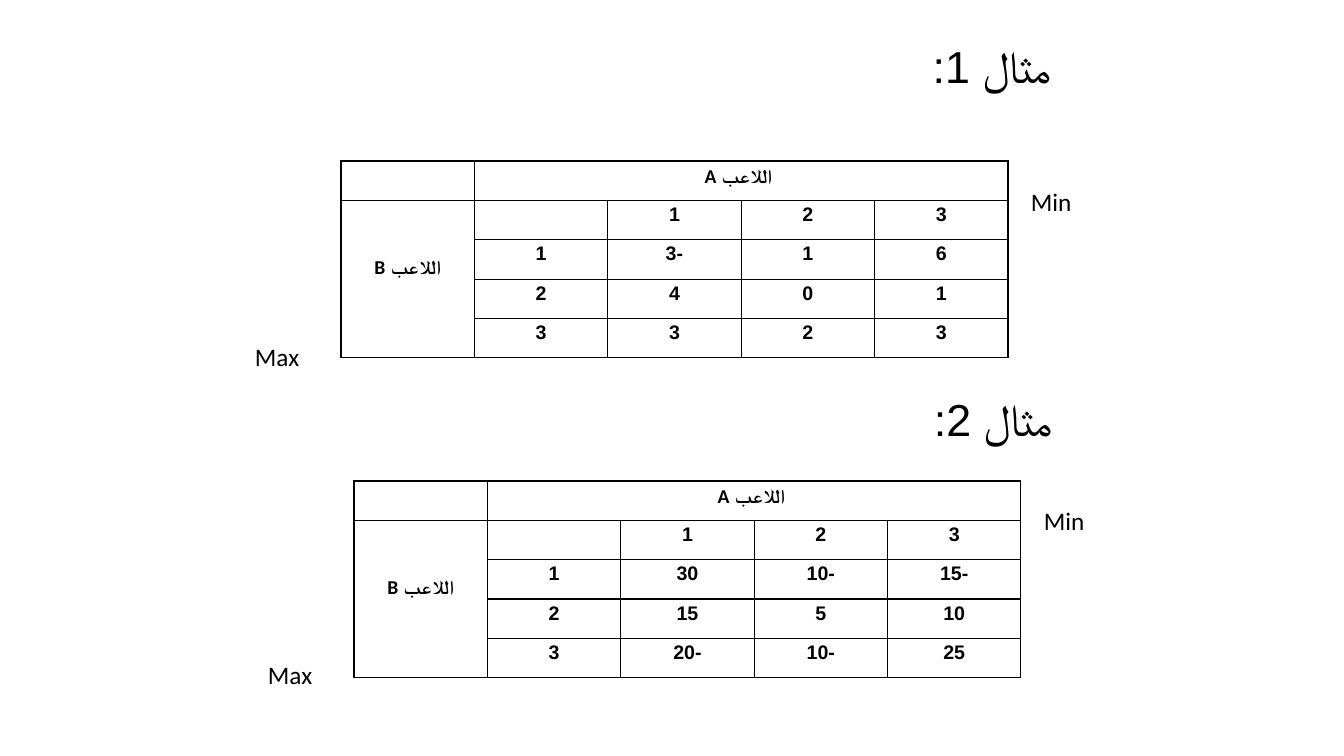
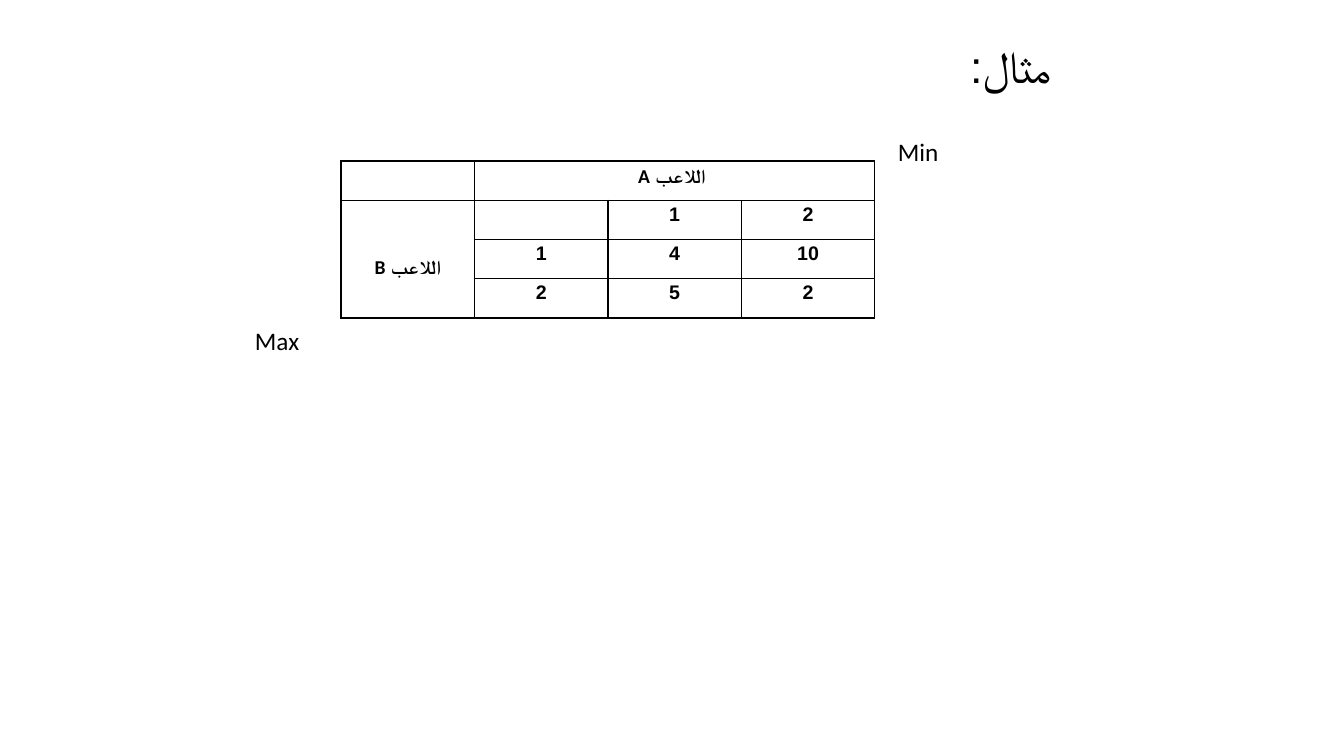
from lxml.etree import SubElement
from pptx import Presentation
from pptx.dml.color import RGBColor
from pptx.enum.text import MSO_ANCHOR as ANCHOR, MSO_AUTO_SIZE as AUTOSIZE, PP_ALIGN as ALIGN
from pptx.oxml.ns import qn
from pptx.util import Emu, Pt

BLACK = RGBColor(0x00, 0x00, 0x00)
FONT, ARABIC_FONT = "Calibri", "Arial"
SLIDE_W, SLIDE_H = 1344, 756
SCALE = 12192000 / SLIDE_W
TITLE_W, TITLE_H = 265, 65
LABEL_W, LABEL_H = 83, 40
SIDE_OFFSET = 52


def px(value):
    return Emu(round(value * SCALE))


def write(tf, text, size, align=None, bold=False):
    p = tf.paragraphs[0]
    if align is not None:
        p.alignment = align
        p._p.get_or_add_pPr().set("rtl", "1")
    r = p.add_run()
    r.text = text
    r.font.size = Pt(size)
    r.font.bold = bold
    r.font.name = FONT
    r.font.color.rgb = BLACK
    SubElement(r._r.get_or_add_rPr(), qn("a:cs")).set("typeface", ARABIC_FONT)
    return p


def set_heading(sp, left, top, text):
    sp.left, sp.top, sp.width, sp.height = map(px, (left, top, TITLE_W, TITLE_H))
    tf = sp.text_frame
    tf.word_wrap = True
    tf.auto_size = AUTOSIZE.SHAPE_TO_FIT_TEXT
    tf.vertical_anchor = ANCHOR.TOP
    write(tf, text, 32, ALIGN.RIGHT)


def add_label(slide, left, top, text):
    sp = slide.shapes.add_textbox(px(left), px(top), px(LABEL_W), px(LABEL_H))
    tf = sp.text_frame
    tf.word_wrap = True
    tf.auto_size = AUTOSIZE.SHAPE_TO_FIT_TEXT
    write(tf, text, 18)


def style_cell(cell):
    cell.margin_left = cell.margin_right = cell.margin_top = cell.margin_bottom = 0
    tcPr = cell._tc.get_or_add_tcPr()
    for side in ("a:lnL", "a:lnR", "a:lnT", "a:lnB"):
        ln = SubElement(tcPr, qn(side), w=str(Pt(1)))
        fill = SubElement(ln, qn("a:solidFill"))
        SubElement(fill, qn("a:srgbClr"), val=str(BLACK))
    cell.fill.background()


def write_cell(cell, text):
    p = write(cell.text_frame, text, 14, ALIGN.CENTER, bold=True)
    p.line_spacing = 1.15


def add_game(slide, box, payoffs, min_offset, max_offset):
    left, top, width, height = box
    n = len(payoffs) + 2
    table = slide.shapes.add_table(n, n, *map(px, box)).table
    table.first_row = table.horz_banding = False
    for col in table.columns:
        col.width = px(width / n)
    for row in table.rows:
        row.height = px(height / n)
    for cell in table.iter_cells():
        style_cell(cell)

    player_a, player_b = table.cell(0, 1), table.cell(1, 0)
    player_a.merge(table.cell(0, n - 1))
    player_b.merge(table.cell(n - 1, 0))
    write_cell(player_a, " اللاعب A")
    write_cell(player_b, "اللاعب B")
    player_b.margin_top = px(SIDE_OFFSET)

    for i, values in enumerate(payoffs, 1):
        write_cell(table.cell(1, i + 1), str(i))
        write_cell(table.cell(i + 1, 1), str(i))
        for j, value in enumerate(values, 2):
            write_cell(table.cell(i + 1, j), str(value))

    add_label(slide, left + width + 13, top + min_offset, "Min")
    add_label(slide, left - 96, top + max_offset, "Max")


def add_title_slide(prs, title):
    slide = prs.slides.add_slide(prs.slide_layouts[5])
    set_heading(slide.shapes.title, 796, 34, title)
    return slide


def two_examples(prs):
    slide = add_title_slide(prs, "مثال 1:")
    add_game(slide, (341, 161, 667, 197),
             [(-3, 1, 6), (4, 0, 1), (3, 2, 3)], 20, 175)
    add_game(slide, (354, 481, 667, 197),
             [(30, -10, -15), (15, 5, 10), (-20, -10, 25)], 19, 173)
    set_heading(slide.shapes.add_textbox(0, 0, 0, 0), 797, 387, "مثال 2:")


def one_example(prs):
    slide = add_title_slide(prs, "مثال:")
    add_game(slide, (341, 161, 534, 157), [(4, 10), (5, 2)], -30, 159)


def main():
    prs = Presentation()
    prs.slide_width, prs.slide_height = px(SLIDE_W), px(SLIDE_H)
    two_examples(prs)
    one_example(prs)
    prs.save("out.pptx")


if __name__ == "__main__":
    main()
